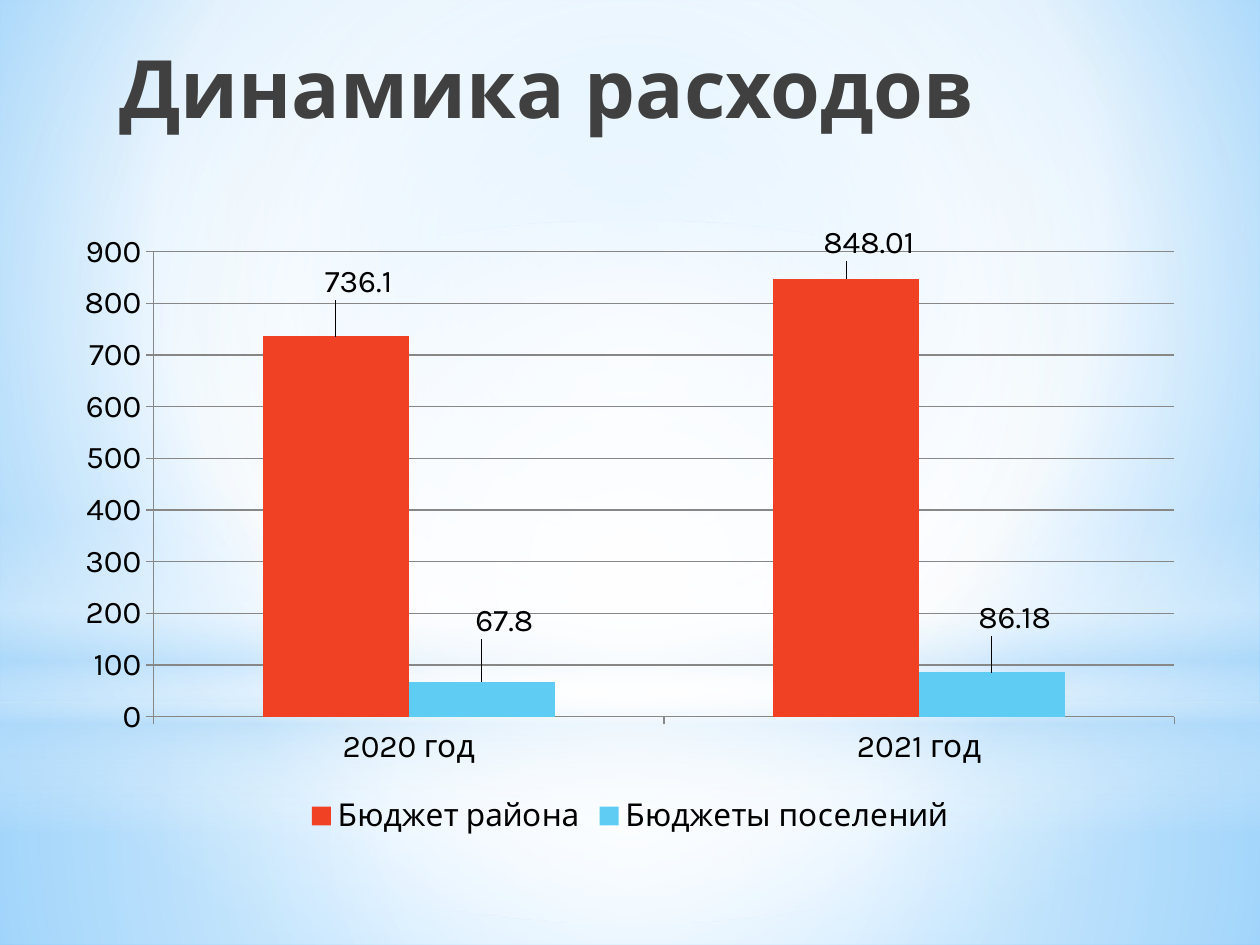
"""Build a slide that compares the spending of two budgets over two years."""
import lxml.etree
import pptx
import pptx.chart.data
import pptx.dml.color
import pptx.enum.chart
import pptx.enum.shapes
import pptx.enum.text
import pptx.oxml.ns
import pptx.util

Cm = pptx.util.Cm
Pt = pptx.util.Pt
qn = pptx.oxml.ns.qn
Kind = pptx.enum.shapes.MSO_SHAPE
Enum = pptx.enum.chart


def paint(code):
    return pptx.dml.color.RGBColor.from_string(code)


def apply(item, values):
    for name, value in values.items():
        setattr(item, name, value)


def add(parent, tag, **values):
    node = lxml.etree.SubElement(parent, qn(tag))
    for name, value in values.items():
        node.set(name, str(value))
    return node


def blend(fill, owner, stops, focus=None):
    fill.gradient()
    grad = owner.find(".//" + qn("a:gradFill"))
    for child in list(grad):
        grad.remove(child)
    group = add(grad, "a:gsLst")
    for place, code, alpha in stops:
        stop = add(group, "a:gs", pos=place * 1000)
        color = add(stop, "a:srgbClr", val=code)
        if alpha < 100:
            add(color, "a:alpha", val=alpha * 1000)
    if focus:
        route = add(grad, "a:path", path="circle")
        sides = {side: part * 1000 for side, part in zip("ltrb", focus)}
        add(route, "a:fillToRect", **sides)
    else:
        add(grad, "a:lin", ang=90 * 60000, scaled=0)


def layout(parent, index, **values):
    for old in parent.findall(qn("c:layout")):
        parent.remove(old)
    node = add(parent, "c:layout")
    manual = add(node, "c:manualLayout")
    for name, value in values.items():
        add(manual, "c:" + name, val=value)
    parent.insert(index, node)


class Deck:
    font = "Karla"
    ink = "000000"
    grey = "878787"
    size = Pt(18)

    def __init__(self, width, height):
        self.show = pptx.Presentation()
        apply(self.show, {"slide_width": Cm(width), "slide_height": Cm(height)})
        self.slide = self.show.slides.add_slide(self.show.slide_layouts[6])

    def ground(self, stops, focus):
        blend(self.slide.background.fill, self.slide.element, stops, focus)

    def glow(self, kind, top, height, stops, focus=None):
        shape = self.slide.shapes.add_shape(
            kind, 0, Cm(top), self.show.slide_width, Cm(height))
        shape.shadow.inherit = False
        shape.line.fill.background()
        blend(shape.fill, shape.element, stops, focus)

    def title(self, text, box, size, code):
        frame = self.slide.shapes.add_textbox(*map(Cm, box)).text_frame
        apply(frame, {"word_wrap": True, "margin_left": 0, "margin_right": 0,
                      "margin_top": 0, "margin_bottom": 0,
                      "vertical_anchor": pptx.enum.text.MSO_ANCHOR.TOP})
        line = frame.paragraphs[0]
        line.alignment = pptx.enum.text.PP_ALIGN.CENTER
        run = line.add_run()
        run.text = text
        apply(run.font, {"name": self.font, "size": Pt(size), "bold": True})
        run.font.color.rgb = paint(code)

    def chart(self, box, years, series, plot):
        data = pptx.chart.data.CategoryChartData()
        data.categories = years
        for name, code, values, shifts in series:
            data.add_series(name, values)
        chart = self.slide.shapes.add_chart(
            Enum.XL_CHART_TYPE.COLUMN_CLUSTERED, *map(Cm, box), data).chart
        apply(chart, {"has_title": False, "has_legend": True})
        apply(chart.font, {"name": self.font, "size": self.size})
        chart.font.color.rgb = paint(self.ink)
        apply(chart.legend, {"position": Enum.XL_LEGEND_POSITION.BOTTOM,
                             "include_in_layout": False})
        apply(chart.plots[0], {"gap_width": 150, "overlap": 0,
                               "vary_by_categories": False})
        axis = chart.value_axis
        apply(axis, {"minimum_scale": 0, "maximum_scale": 900,
                     "major_unit": 100, "has_major_gridlines": True})
        lines = [axis.major_gridlines.format.line]
        for item in (axis, chart.category_axis):
            item.major_tick_mark = Enum.XL_TICK_MARK.OUTSIDE
            lines.append(item.format.line)
        for line in lines:
            line.color.rgb = paint(self.grey)
            line.width = Pt(0.75)
        area = chart.element.find(".//" + qn("c:plotArea"))
        layout(area, 0, layoutTarget="inner", xMode="edge", yMode="edge", **plot)
        for bars, (name, code, values, shifts) in zip(chart.plots[0].series, series):
            bars.format.fill.solid()
            bars.format.fill.fore_color.rgb = paint(code)
            for index in range(len(values)):
                label = bars.points[index].data_label
                label.position = Enum.XL_LABEL_POSITION.OUTSIDE_END
            labels = bars.format.element if hasattr(bars.format, "element") else bars._element
            for label, (x, y) in zip(labels.iter(qn("c:dLbl")), shifts):
                layout(label, 1, x=x, y=y)


def main():
    deck = Deck(25.4, 19.05)
    white, pale, middle = "FFFFFF", "B4DCFA", (50, 50, 50, 50)
    deck.ground([(0, "9ED5FF", 100), (60, white, 100), (100, "5BB9FF", 100)],
                (20, 10, 20, 60))
    deck.glow(Kind.RECTANGLE, 14.17, 4.88,
              [(0, white, 91), (37, white, 76), (100, pale, 79)], middle)
    deck.glow(Kind.RECTANGLE, 0, 14.17,
              [(0, white, 89), (48, white, 62), (100, pale, 79)], middle)
    deck.glow(Kind.RECTANGLE, 10.46, 6.35,
              [(0, white, 0), (29, white, 30), (45, pale, 40),
               (55, white, 26), (65, pale, 60), (100, white, 0)])
    deck.glow(Kind.OVAL, 4.45, 14.17, [(0, white, 100), (56, white, 0)], middle)
    deck.title("Динамика расходов", (1.27, 0.76, 19.5, 3.18), 46, "404040")
    deck.chart(
        (1.27, 4.45, 22.86, 12.5), ["2020 год", "2021 год"],
        [("Бюджет района", "F14124", (736.1, 848.01),
          [(0.02, -0.05), (0.02, -0.02)]),
         ("Бюджеты поселений", "5ECCF3", (67.8, 86.18),
          [(0.02, -0.06), (0.02, -0.05)])],
        {"x": 0.08, "y": 0.05, "w": 0.9, "h": 0.75})
    deck.show.save("out.pptx")


if __name__ == "__main__":
    main()
